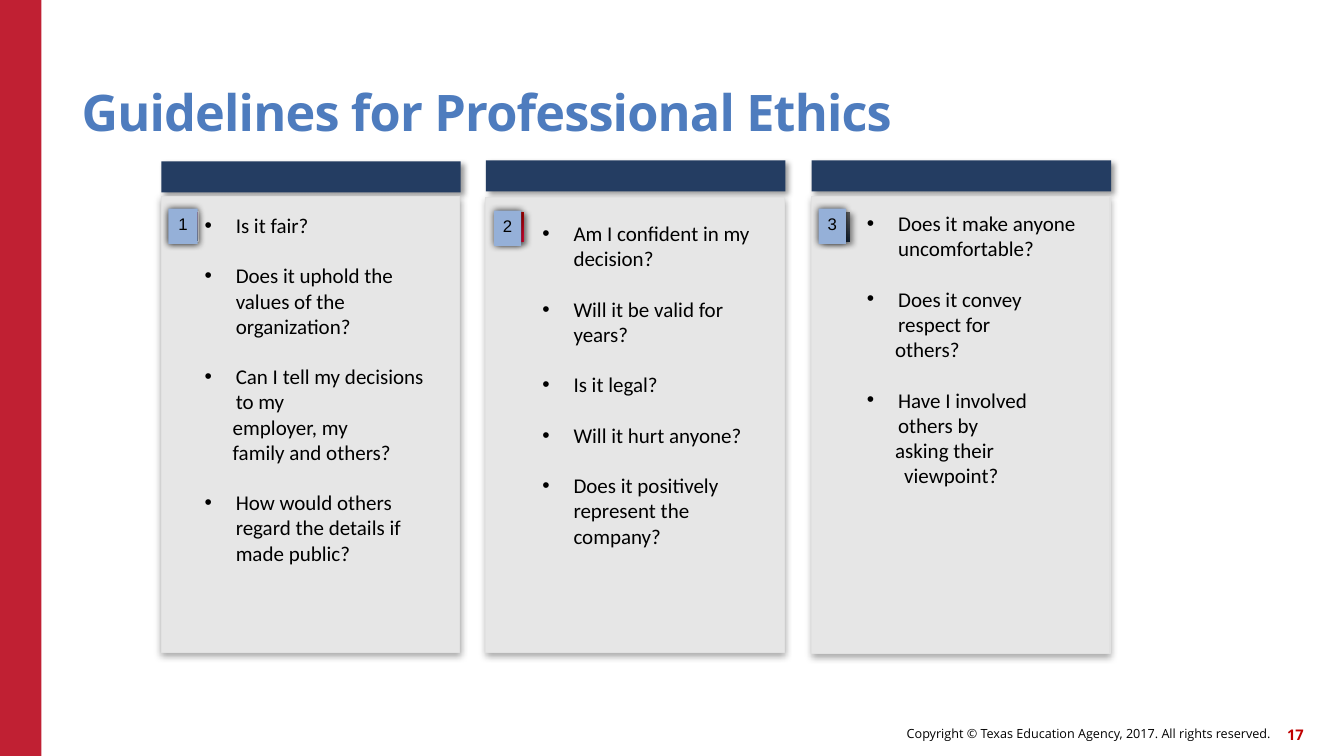
from lxml.etree import SubElement as Sub
from pptx import Presentation
from pptx.dml.color import RGBColor as RGB
from pptx.enum.shapes import MSO_SHAPE as Shape
from pptx.enum.text import MSO_ANCHOR as Anchor, PP_ALIGN as Align
from pptx.oxml.ns import qn
from pptx.util import Inches, Pt

WHITE = RGB(0xFF, 0xFF, 0xFF)
BLACK = RGB(0x00, 0x00, 0x00)
CRIMSON = RGB(0xC0, 0x20, 0x33)
RED = RGB(0xC0, 0x00, 0x00)
BRIGHT = RGB(0xF5, 0x07, 0x36)
BLUE = RGB(0x4E, 0x7C, 0xBE)
NAVY = RGB(0x24, 0x3D, 0x62)
PALE = RGB(0x95, 0xB0, 0xD8)
CARD = RGB(0xE6, 0xE6, 0xE6)
EDGE = RGB(0xE1, 0xE1, 0xE1)
GREY = RGB(0x62, 0x62, 0x62)
INK = RGB(0x12, 0x20, 0x31)

DROP = (40, 4, 3, 45)
SOFT = (35, 5, 1.8, 90)
GLOW = (75, 5, 0, 0)

HANG = (0.31, -0.31)
FLUSH = (0.28, 0)
STEP = (0.37, -0.09)

COLS = [
    dict(left=1.6, head=1.6, top=1.95, high=4.52,
         tile=(1.68, 0.29), stops=((BLACK, 0), (CRIMSON, 1)), turn=90,
         rim=WHITE, shade=SOFT, badge=(1.67, 2.07, 0.29, 0.35),
         box=(1.93, 2.06, 2.59, 4.68),
         items=[("Is it fair?", HANG),
                ("Does it uphold the\vvalues of the organization?", HANG),
                ("Can I tell my decisions\vto my", HANG),
                ("employer, my", FLUSH),
                ("family and others?", FLUSH),
                ("How would others regard the details if made public?", HANG)]),
    dict(left=4.82, head=1.59, top=1.96, high=4.51,
         tile=(4.92, 0.28), stops=((BRIGHT, 0.2), (RED, 0.89)), turn=90,
         rim=None, shade=DROP, badge=(4.9, 2.09, 0.27, 0.35),
         box=(5.28, 2.14, 2.45, 4.49),
         items=[("Am I confident in my decision?", HANG),
                ("Will it be valid for years?", HANG),
                ("Is it legal?", HANG),
                ("Will it hurt anyone?", HANG),
                ("Does it positively represent the company?", HANG)]),
    dict(left=8.05, head=1.59, top=1.95, high=4.53,
         tile=(8.14, 0.29), stops=((GREY, 0), (INK, 1)), turn=270,
         rim=None, shade=DROP, badge=(8.12, 2.07, 0.27, 0.35),
         box=(8.5, 2.04, 2.36, 4.72),
         items=[("Does it make anyone uncomfortable?", HANG),
                ("Does it convey respect for", HANG),
                ("others?", FLUSH),
                ("Have I involved others by", HANG),
                ("asking their viewpoint?", STEP)]),
]


class Deck:
    """Holds the style and the current slide, and draws each kind of element."""

    def __init__(self):
        self.show = Presentation()
        self.show.slide_width = Inches(13.33)
        self.show.slide_height = Inches(7.5)
        self.slide = self.show.slides.add_slide(self.show.slide_layouts[6])

    def rect(self, at, fill=None, line=None, shade=None):
        box = self.slide.shapes.add_shape(Shape.RECTANGLE, *map(Inches, at))
        box.shadow.inherit = False
        if fill is not None:
            box.fill.solid()
            box.fill.fore_color.rgb = fill
        if line is None:
            box.line.fill.background()
        else:
            box.line.color.rgb = line
            box.line.width = Pt(0.75)
        if shade:
            self.cast(box, *shade)
        return box

    def cast(self, box, alpha, blur, dist, turn):
        effects = box.element.spPr.find(qn("a:effectLst"))
        outer = Sub(effects, qn("a:outerShdw"), blurRad=str(Pt(blur)),
                    dist=str(Pt(dist)), dir=str(turn * 60000),
                    algn="ctr", rotWithShape="0")
        tint = Sub(outer, qn("a:srgbClr"), val=str(BLACK))
        Sub(tint, qn("a:alpha"), val=str(alpha * 1000))

    def blend(self, box, stops, turn):
        box.fill.gradient()
        box.fill.gradient_angle = turn
        for stop, (tint, pos) in zip(box.fill.gradient_stops, stops):
            stop.color.rgb = tint
            stop.position = pos

    def area(self, at, anchor=Anchor.MIDDLE, inset=0):
        frame = self.slide.shapes.add_textbox(*map(Inches, at)).text_frame
        frame.word_wrap = True
        frame.vertical_anchor = anchor
        if inset is not None:
            frame.margin_left = frame.margin_right = Inches(inset)
            frame.margin_top = frame.margin_bottom = Inches(inset)
        return frame

    def put(self, para, text, size=15, font="Calibri", color=BLACK,
            bold=False, align=Align.LEFT, indent=None, bullet=False,
            before=0, track=None, lead=None):
        para.text = text
        para.alignment = align
        if before:
            para.space_before = Pt(before)
        if lead:
            para.line_spacing = lead
        props = para._p.get_or_add_pPr()
        if indent:
            props.set("marL", str(Inches(indent[0])))
            props.set("indent", str(Inches(indent[1])))
        if bullet:
            Sub(props, qn("a:buFont"), typeface="Arial")
            Sub(props, qn("a:buChar"), char="•")
        for run in para.runs:
            run.font.size = Pt(size)
            run.font.name = font
            run.font.bold = bold
            run.font.color.rgb = color
            if track:
                run._r.get_or_add_rPr().set("spc", str(track))

    def label(self, at, text, anchor=Anchor.MIDDLE, **style):
        frame = self.area(at, anchor)
        self.put(frame.paragraphs[0], text, font="Open Sans", **style)

    def bullets(self, at, items):
        frame = self.area(at, Anchor.TOP, None)
        for i, (text, indent) in enumerate(items):
            para = frame.add_paragraph() if i else frame.paragraphs[0]
            mark = indent == HANG
            self.put(para, text, indent=indent, bullet=mark,
                     before=18 if mark and i else 0)

    def badge(self, at, text):
        frame = self.rect(at, PALE, shade=GLOW).text_frame
        frame.word_wrap = False
        frame.vertical_anchor = Anchor.TOP
        self.put(frame.paragraphs[0], text, size=12, font="Arial",
                 align=Align.CENTER)

    def column(self, num, col):
        self.rect((col["left"], col["head"], 2.97, 0.31), NAVY, shade=DROP)
        self.rect((col["left"], col["top"], 2.96, col["high"]), CARD, EDGE, SOFT)
        left, wide = col["tile"]
        tile = self.rect((left, 2.1, wide, 0.3), line=col["rim"],
                         shade=col["shade"])
        self.blend(tile, col["stops"], col["turn"])
        self.badge(col["badge"], str(num))
        self.bullets(col["box"], col["items"])


def main():
    deck = Deck()
    deck.rect((0, 0, 0.41, 7.5), CRIMSON)
    deck.label((6.14, 7.12, 6.46, 0.32),
               "Copyright © Texas Education Agency, 2017. All rights reserved.",
               size=9, align=Align.RIGHT)
    deck.label((12.51, 7.13, 0.42, 0.32), "17", size=10.5, color=RED,
               bold=True, align=Align.RIGHT)
    deck.label((0.81, 0.45, 11, 0.96), "Guidelines for Professional Ethics",
               anchor=Anchor.BOTTOM, size=36, color=BLUE, bold=True,
               track=-60, lead=0.9)
    for num, col in enumerate(COLS, 1):
        deck.column(num, col)
    deck.show.save("out.pptx")


if __name__ == "__main__":
    main()
